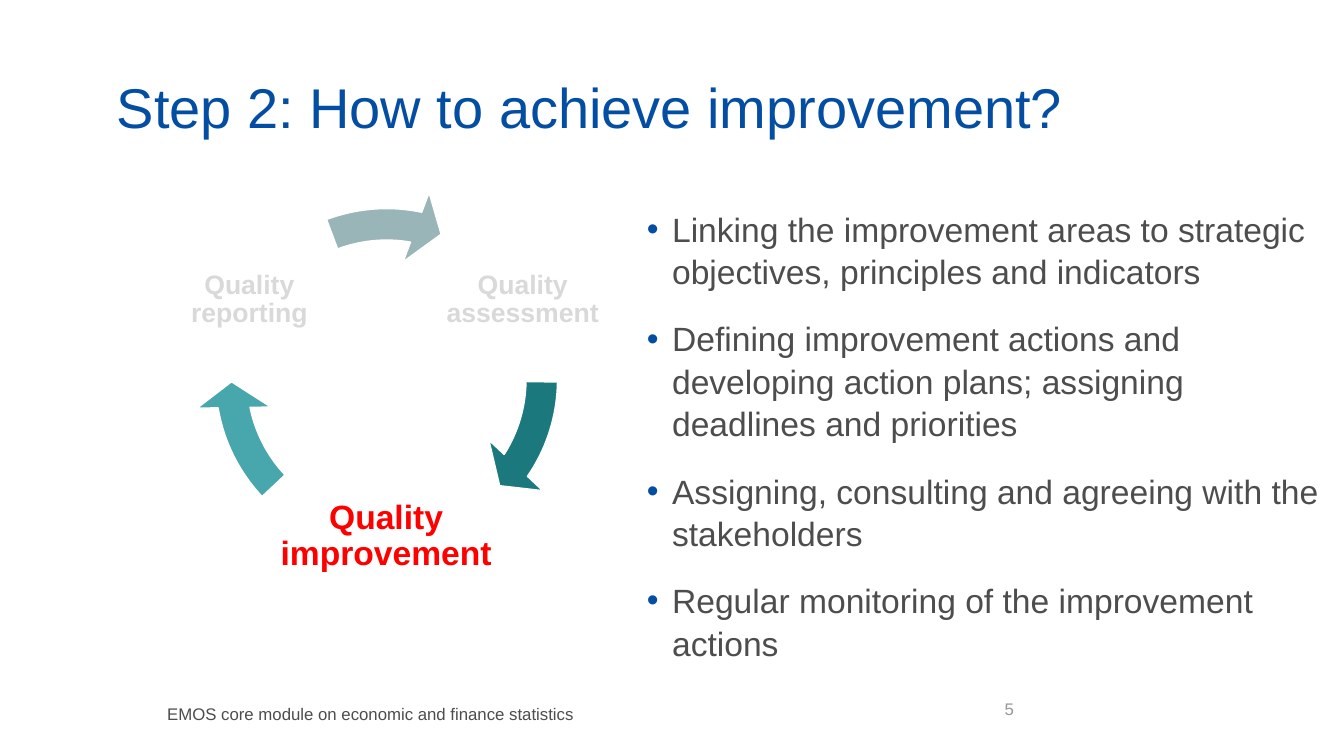
from dataclasses import dataclass

import pptx
import pptx.dml.color
import pptx.enum.shapes
import pptx.enum.text
import pptx.oxml
import pptx.oxml.ns
import pptx.util

Pt = pptx.util.Pt
Anchor = pptx.enum.text.MSO_ANCHOR
Align = pptx.enum.text.PP_ALIGN


@dataclass(frozen=True)
class Theme:
    font: str = "Arial"
    blue: str = "034EA2"
    body: str = "4D4D4D"
    number: str = "979797"
    faded: str = "D9D9D9"
    highlight: str = "FF0000"
    white: str = "FFFFFF"
    dark_teal: str = "1B797E"
    teal: str = "48A6AD"
    grey_teal: str = "99B5B8"
    title_size: int = 40
    body_size: int = 24
    step_size: int = 19
    small_size: int = 12


THEME = Theme()

CYCLE_BOX = (139, 133.9, 274.3, 274.3)
ARROW_THICKNESS, ARROW_SWEEP, ARROW_HEAD = 0.082, 5.758, 0.096

# label, box, size, colour
STEPS = [
    ("Quality assessment", (315.4, 156.2, 115.9, 115.9), THEME.step_size, THEME.faded),
    ("Quality improvement", (193.7, 305.3, 164.2, 155.5), THEME.body_size, THEME.highlight),
    ("Quality reporting", (120.2, 156.2, 115.9, 115.9), THEME.step_size, THEME.faded),
]

# end angle, start angle, colour
ARROWS = [
    (20.173, 0.507, THEME.dark_teal),
    (101.735, 82.069, THEME.teal),
    (168.581, 149.661, THEME.grey_teal),
]

ACTIONS = [
    "Linking the improvement areas to strategic objectives, principles and indicators",
    "Defining improvement actions and developing action plans; assigning deadlines and priorities",
    "Assigning, consulting and agreeing with the stakeholders",
    "Regular monitoring of the improvement actions",
]


def rgb(value):
    return pptx.dml.color.RGBColor.from_string(value)


def add_text(slide, box, lines, size, color, anchor=Anchor.TOP, align=Align.LEFT,
             spacing=1.0, after=0, bold=False, margins=(7.2, 3.6, 7.2, 3.6), bullet=None):
    """Add a wrapped text box with one paragraph per line; bullet is a colour."""
    frame = slide.shapes.add_textbox(*map(Pt, box)).text_frame
    frame.word_wrap = True
    frame.vertical_anchor = anchor
    (frame.margin_left, frame.margin_top,
     frame.margin_right, frame.margin_bottom) = map(Pt, margins)
    for index, line in enumerate(lines):
        paragraph = frame.add_paragraph() if index else frame.paragraphs[0]
        paragraph.text = line
        paragraph.alignment = align
        paragraph.line_spacing = spacing
        paragraph.space_after = Pt(after)
        if bullet:
            add_bullet(paragraph, bullet)
        paragraph.font.name = THEME.font
        paragraph.font.size = Pt(size)
        paragraph.font.bold = bold
        paragraph.font.color.rgb = rgb(color)


def add_bullet(paragraph, color, indent=18):
    properties = paragraph._p.get_or_add_pPr()
    properties.set("marL", str(Pt(indent)))
    properties.set("indent", str(-Pt(indent)))
    namespace = pptx.oxml.ns.nsdecls("a")
    for element in (
        f'<a:buClr {namespace}><a:srgbClr val="{color}"/></a:buClr>',
        f'<a:buFont {namespace} typeface="{THEME.font}"/>',
        f'<a:buChar {namespace} char="•"/>',
    ):
        properties.append(pptx.oxml.parse_xml(element))


def add_cycle_arrow(slide, end, start, color):
    arrow = slide.shapes.add_shape(
        pptx.enum.shapes.MSO_SHAPE.CIRCULAR_ARROW, *map(Pt, CYCLE_BOX))
    settings = (ARROW_THICKNESS, ARROW_SWEEP, end, start, ARROW_HEAD)
    for index, value in enumerate(settings):
        arrow.adjustments[index] = value
    arrow.shadow.inherit = False
    arrow.fill.solid()
    arrow.fill.fore_color.rgb = rgb(color)
    arrow.line.color.rgb = rgb(THEME.white)
    arrow.line.width = Pt(1)


def main():
    presentation = pptx.Presentation()
    presentation.slide_width = Pt(960)
    presentation.slide_height = Pt(540)
    slide = presentation.slides.add_slide(presentation.slide_layouts[6])

    add_text(slide, (112.3, 499, 437.8, 21.6),
             ["EMOS core module on economic and finance statistics"],
             THEME.small_size, THEME.body)
    add_text(slide, (455, 144, 505, 348.5), ACTIONS, THEME.body_size, THEME.body,
             spacing=1.05, after=18, bullet=THEME.blue)
    add_text(slide, (76.3, 38.2, 828, 61.9), ["Step 2: How to achieve improvement?"],
             THEME.title_size, THEME.blue, anchor=Anchor.BOTTOM, spacing=0.9,
             margins=(7.2, 3.6, 7.2, 0))
    add_text(slide, (710.6, 491.8, 216, 28.8), ["5"], THEME.small_size, THEME.number,
             anchor=Anchor.MIDDLE)

    for (label, box, size, color), arrow in zip(STEPS, ARROWS):
        add_text(slide, box, [label], size, color, anchor=Anchor.MIDDLE,
                 align=Align.CENTER, spacing=0.9, bold=True, margins=(2, 2, 2, 2))
        add_cycle_arrow(slide, *arrow)

    presentation.save("out.pptx")


if __name__ == "__main__":
    main()
